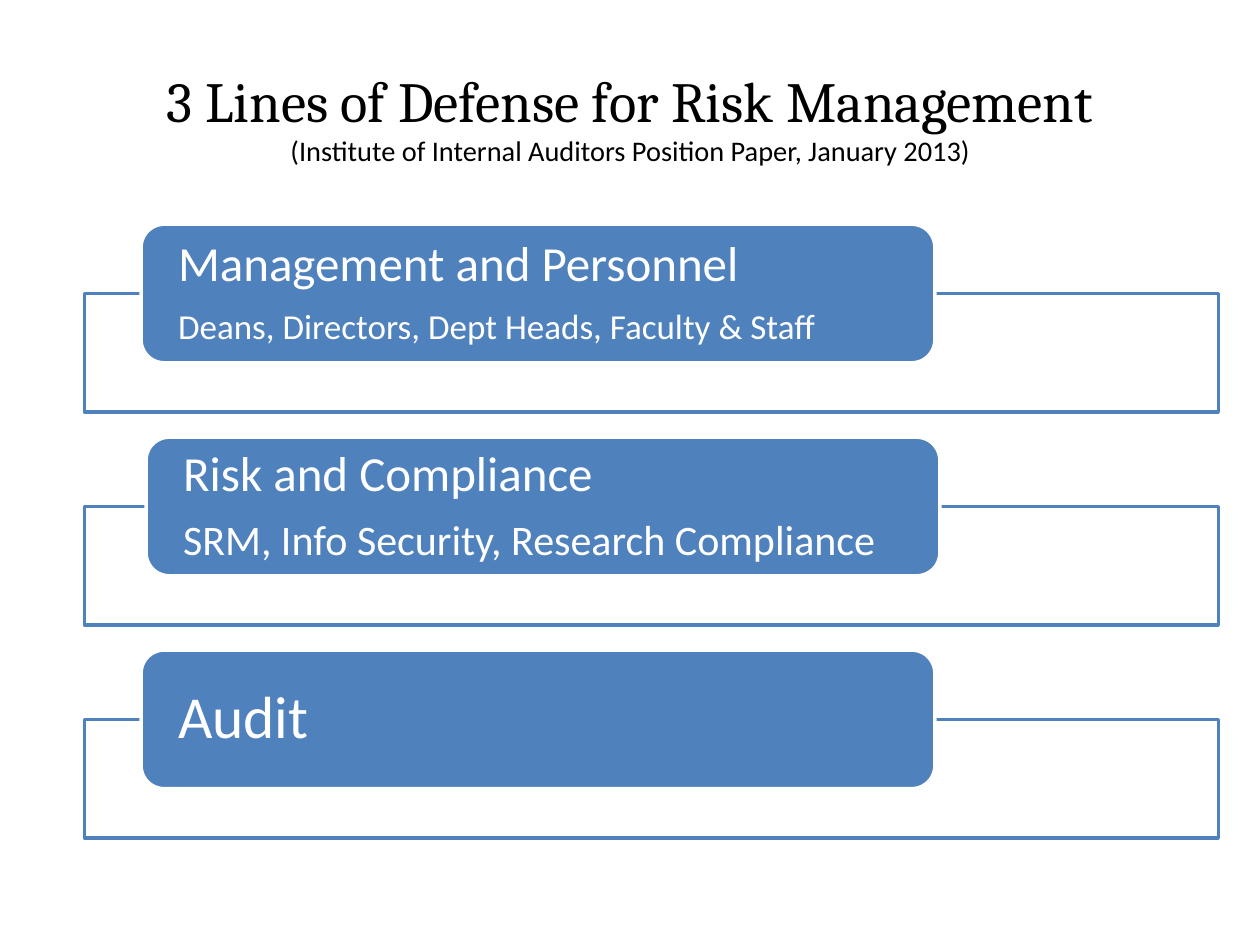
from dataclasses import dataclass

from pptx import Presentation
from pptx import util as u
from pptx.dml.color import RGBColor
from pptx.enum import shapes, text
from pptx.slide import Slide


def color(hex_code):
    return RGBColor.from_string(hex_code)


@dataclass
class DefenseSlide:
    """Holds the style and the current slide, and draws each kind of element."""

    slide: Slide
    blue: str = "4F81BD"
    white: str = "FFFFFF"
    black: str = "000000"
    body_font: str = "Calibri"
    title_font: str = "Cambria"

    def style_run(self, run, size, font, hex_code):
        run.font.size = u.Pt(size)
        run.font.name = font
        run.font.color.rgb = color(hex_code)

    def title(self, heading, source):
        box = self.slide.shapes.add_textbox(
            u.Inches(0.5), u.Inches(0.3), u.Inches(9), u.Inches(1.25))
        frame = box.text_frame
        frame.word_wrap = True
        frame.vertical_anchor = text.MSO_ANCHOR.MIDDLE
        paragraph = frame.paragraphs[0]
        paragraph.text = f"{heading}\v{source}"
        paragraph.alignment = text.PP_ALIGN.CENTER
        heading_run, source_run = paragraph.runs
        self.style_run(heading_run, 32.4, self.title_font, self.black)
        self.style_run(source_run, 16.2, self.body_font, self.black)

    def block(self, preset, left, top, width, height, fill, line):
        block = self.slide.shapes.add_shape(
            preset, u.Inches(left), u.Inches(top), u.Inches(width), u.Inches(height))
        block.shadow.inherit = False
        block.fill.solid()
        block.fill.fore_color.rgb = color(fill)
        block.line.color.rgb = color(line)
        block.line.width = u.Pt(2)
        return block

    def frame(self, top):
        self.block(shapes.MSO_SHAPE.RECTANGLE, 0.67, top, 9, 0.94, self.white, self.blue)

    def label(self, left, top, lines):
        label = self.block(
            shapes.MSO_SHAPE.ROUNDED_RECTANGLE, left, top, 6.3, 1.1, self.blue, self.white)
        frame = label.text_frame
        frame.word_wrap = True
        frame.vertical_anchor = text.MSO_ANCHOR.MIDDLE
        frame.margin_left = frame.margin_right = u.Inches(0.24)
        frame.margin_top = frame.margin_bottom = 0
        frame.text = "\n".join(wording for wording, _ in lines)
        for paragraph, (_, size) in zip(frame.paragraphs, lines):
            paragraph.alignment = text.PP_ALIGN.LEFT
            paragraph.line_spacing = 0.9
            paragraph.space_after = u.Pt(9.8)
            self.style_run(paragraph.runs[0], size, self.body_font, self.white)


def main():
    presentation = Presentation()
    presentation.slide_width = u.Inches(10)
    presentation.slide_height = u.Inches(7.5)
    page = DefenseSlide(presentation.slides.add_slide(presentation.slide_layouts[6]))

    page.title("3 Lines of Defense for Risk Management",
               "(Institute of Internal Auditors Position Paper, January 2013)")

    defense_lines = [
        (1.12, [("Management and Personnel", 28),
                ("Deans, Directors, Dept Heads, Faculty & Staff", 20)]),
        (1.16, [("Risk and Compliance", 28),
                ("SRM, Info Security, Research Compliance", 24)]),
        (1.12, [("Audit", 34)]),
    ]
    first_top, pitch, overlap = 2.33, 1.69, 0.55
    for index, (left, lines) in enumerate(defense_lines):
        top = first_top + index * pitch
        page.frame(top)
        page.label(left, top - overlap, lines)

    presentation.save("out.pptx")


if __name__ == "__main__":
    main()
